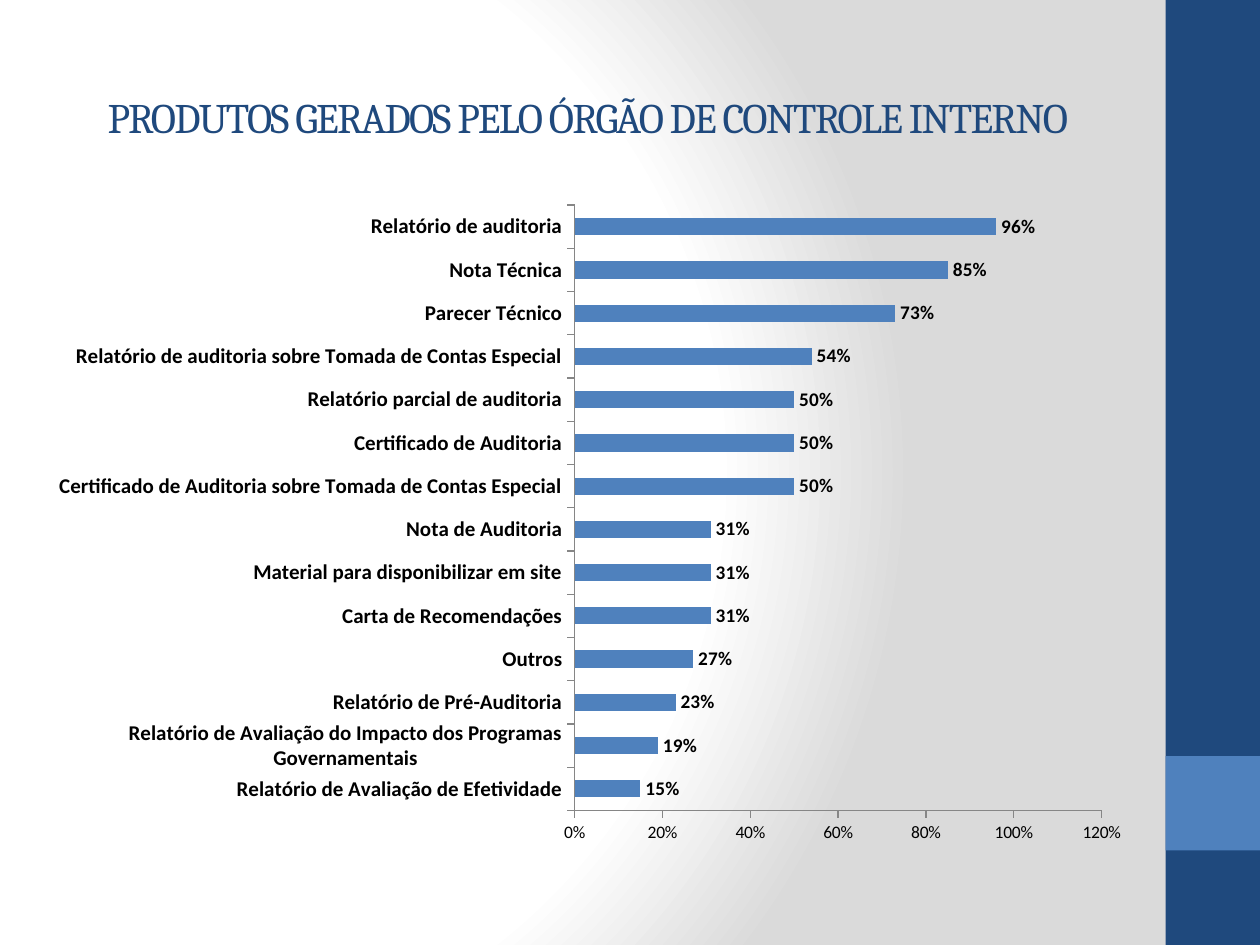
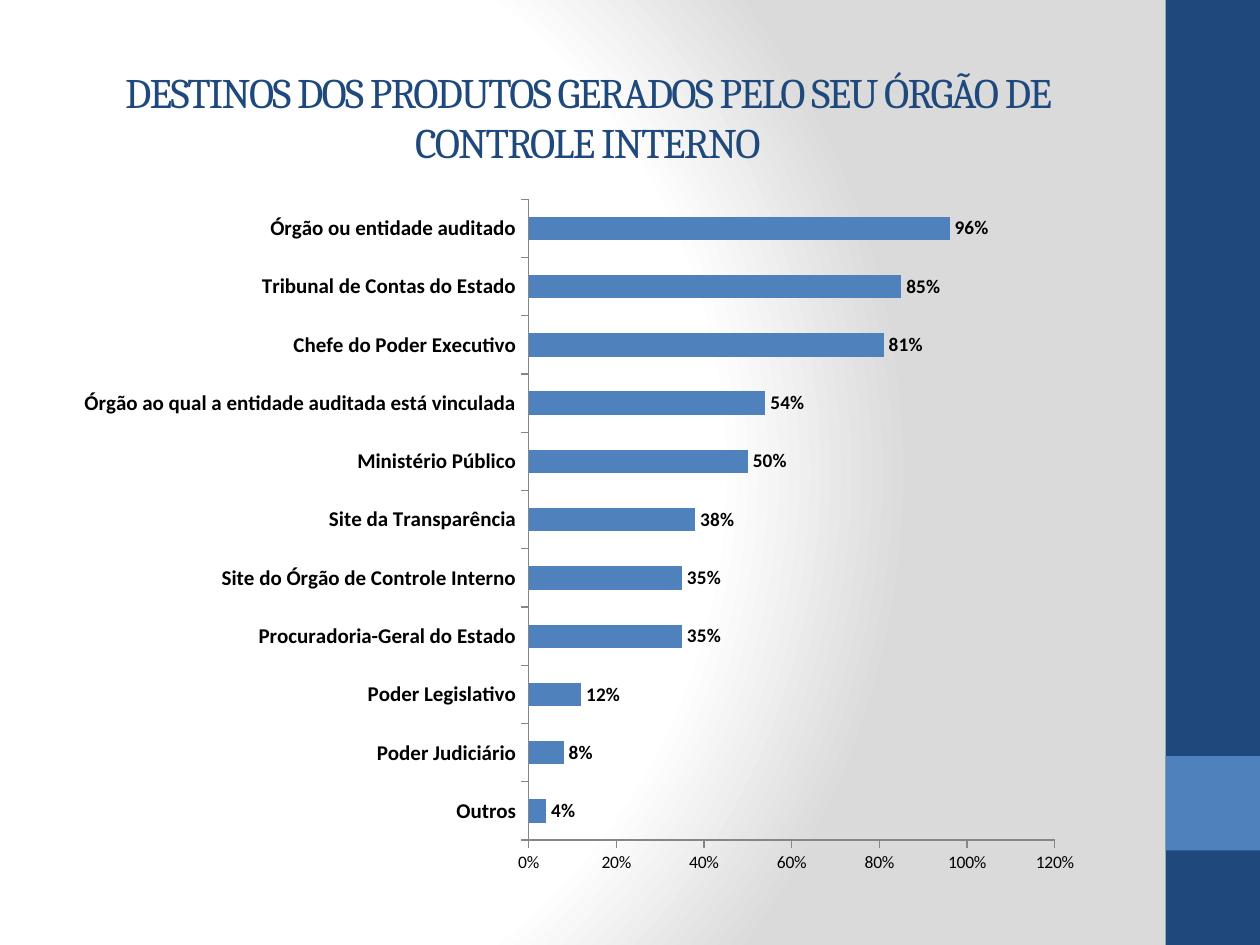
from pptx import Presentation
from pptx.util import Pt
from pptx.dml.color import RGBColor
from pptx.chart.data import CategoryChartData as Data
from pptx.enum.chart import XL_CHART_TYPE as Kind, XL_LABEL_POSITION as Spot
from pptx.enum.chart import XL_TICK_MARK as Tick
from pptx.enum.shapes import MSO_SHAPE as Shape
from pptx.enum.text import PP_ALIGN as Align, MSO_ANCHOR as Anchor
from pptx.oxml import parse_xml
from pptx.oxml.ns import nsdecls

NAVY, BLUE, GREY, BLACK = "1F497D", "4F81BD", "868686", "000000"
STOPS = [(0, "FFFFFF"), (75, "FFFFFF"), (100, "DADADA")]
BANDS = [(0, 540, NAVY), (432, 54, BLUE)]  # top, height, colour


def color(code):
    return RGBColor.from_string(code)


def style(font, **look):
    font.color.rgb = color(look.pop("color", BLACK))
    for name, value in look.items():
        setattr(font, name, value)


# Content: title, chart box, plot area as shares of the box, bars from the top down
pages = [
    ("PRODUTOS GERADOS PELO ÓRGÃO DE CONTROLE INTERNO",
     (14.4, 105.84, 640.8, 380.16), (0.49, 0.03, 0.47, 0.91),
     [("Relatório de auditoria", 0.96),
      ("Nota Técnica", 0.85),
      ("Parecer Técnico", 0.73),
      ("Relatório de auditoria sobre Tomada de Contas Especial", 0.54),
      ("Relatório parcial de auditoria", 0.5),
      ("Certificado de Auditoria", 0.5),
      ("Certificado de Auditoria sobre Tomada de Contas Especial", 0.5),
      ("Nota de Auditoria", 0.31),
      ("Material para disponibilizar em site", 0.31),
      ("Carta de Recomendações", 0.31),
      ("Outros", 0.27),
      ("Relatório de Pré-Auditoria", 0.23),
      ("Relatório de Avaliação do Impacto dos Programas Governamentais", 0.19),
      ("Relatório de Avaliação de Efetividade", 0.15)]),
    ("DESTINOS DOS PRODUTOS GERADOS PELO SEU ÓRGÃO DE CONTROLE INTERNO",
     (36.72, 105.84, 589.68, 402.48), (0.45, 0.02, 0.51, 0.91),
     [("Órgão ou entidade auditado", 0.96),
      ("Tribunal de Contas do Estado", 0.85),
      ("Chefe do Poder Executivo", 0.81),
      ("Órgão ao qual a entidade auditada está vinculada", 0.54),
      ("Ministério Público", 0.5),
      ("Site da Transparência", 0.38),
      ("Site do Órgão de Controle Interno", 0.35),
      ("Procuradoria-Geral do Estado", 0.35),
      ("Poder Legislativo", 0.12),
      ("Poder Judiciário", 0.08),
      ("Outros", 0.04)]),
]

deck = Presentation()
deck.slide_width, deck.slide_height = Pt(720), Pt(540)

for title, place, plot_area, bars in pages:
    slide = deck.slides.add_slide(deck.slide_layouts[6])

    # Radial background
    stops = "".join(f'<a:gs pos="{pos * 1000}"><a:srgbClr val="{code}"/></a:gs>'
                    for pos, code in STOPS)
    back = parse_xml(
        f'<p:bg {nsdecls("p", "a")}><p:bgPr><a:gradFill rotWithShape="1">'
        f'<a:gsLst>{stops}</a:gsLst><a:path path="circle">'
        '<a:fillToRect l="20000" t="50000" r="100000" b="50000"/></a:path>'
        '</a:gradFill><a:effectLst/></p:bgPr></p:bg>')
    slide.element.xpath("p:cSld")[0].insert(0, back)

    # Side bands
    for top, height, code in BANDS:
        band = slide.shapes.add_shape(Shape.RECTANGLE, Pt(666), Pt(top), Pt(54), Pt(height))
        band.shadow.inherit = False
        band.fill.solid()
        band.fill.fore_color.rgb = color(code)
        band.line.fill.background()

    # Title
    box = slide.shapes.add_textbox(Pt(36), Pt(21.6), Pt(599.76), Pt(90))
    frame = box.text_frame
    frame.word_wrap = True
    frame.vertical_anchor = Anchor.MIDDLE
    para = frame.paragraphs[0]
    para.alignment = Align.CENTER
    run = para.add_run()
    run.text = title
    style(run.font, size=Pt(24), name="Cambria", color=NAVY)
    box.element.xpath(".//a:rPr")[0].set("spc", "-100")

    # Bar chart, filled from the bottom up
    data = Data(number_format="0%")
    names, values = zip(*reversed(bars))
    data.categories = names
    data.add_series("Series 1", values)
    chart = slide.shapes.add_chart(Kind.BAR_CLUSTERED, *map(Pt, place), data).chart
    chart.has_legend = chart.has_title = False
    style(chart.font, size=Pt(10), name="Calibri")

    # Fixed plot area
    area = chart.element.xpath(".//c:plotArea")[0]
    for old in area.xpath("c:layout"):
        area.remove(old)
    sides = "".join(f'<c:{side} val="{share}"/>' for side, share in zip("xywh", plot_area))
    area.insert(0, parse_xml(
        f'<c:layout {nsdecls("c")}><c:manualLayout><c:layoutTarget val="inner"/>'
        f'<c:xMode val="edge"/><c:yMode val="edge"/>{sides}</c:manualLayout></c:layout>'))

    # Bars and labels
    plot = chart.plots[0]
    plot.gap_width = 150
    plot.vary_by_categories = False
    fill = plot.series[0].format.fill
    fill.solid()
    fill.fore_color.rgb = color(BLUE)
    plot.has_data_labels = True
    labels = plot.data_labels
    for name, value in {"show_value": True, "number_format": "0%",
                        "number_format_is_linked": False,
                        "position": Spot.OUTSIDE_END}.items():
        setattr(labels, name, value)
    style(labels.font, size=Pt(11), bold=True, name="Calibri")

    # Axes
    scale = chart.value_axis
    scale.minimum_scale, scale.maximum_scale, scale.major_unit = 0, 1.2, 0.2
    scale.tick_labels.number_format = "0%"
    scale.tick_labels.number_format_is_linked = False
    for axis, size, bold in [(chart.category_axis, 12, True), (scale, 10, False)]:
        axis.has_major_gridlines = False
        axis.major_tick_mark = Tick.OUTSIDE
        axis.minor_tick_mark = Tick.NONE
        axis.format.line.color.rgb = color(GREY)
        axis.format.line.width = Pt(0.75)
        style(axis.tick_labels.font, size=Pt(size), bold=bold, name="Calibri")

deck.save("out.pptx")
